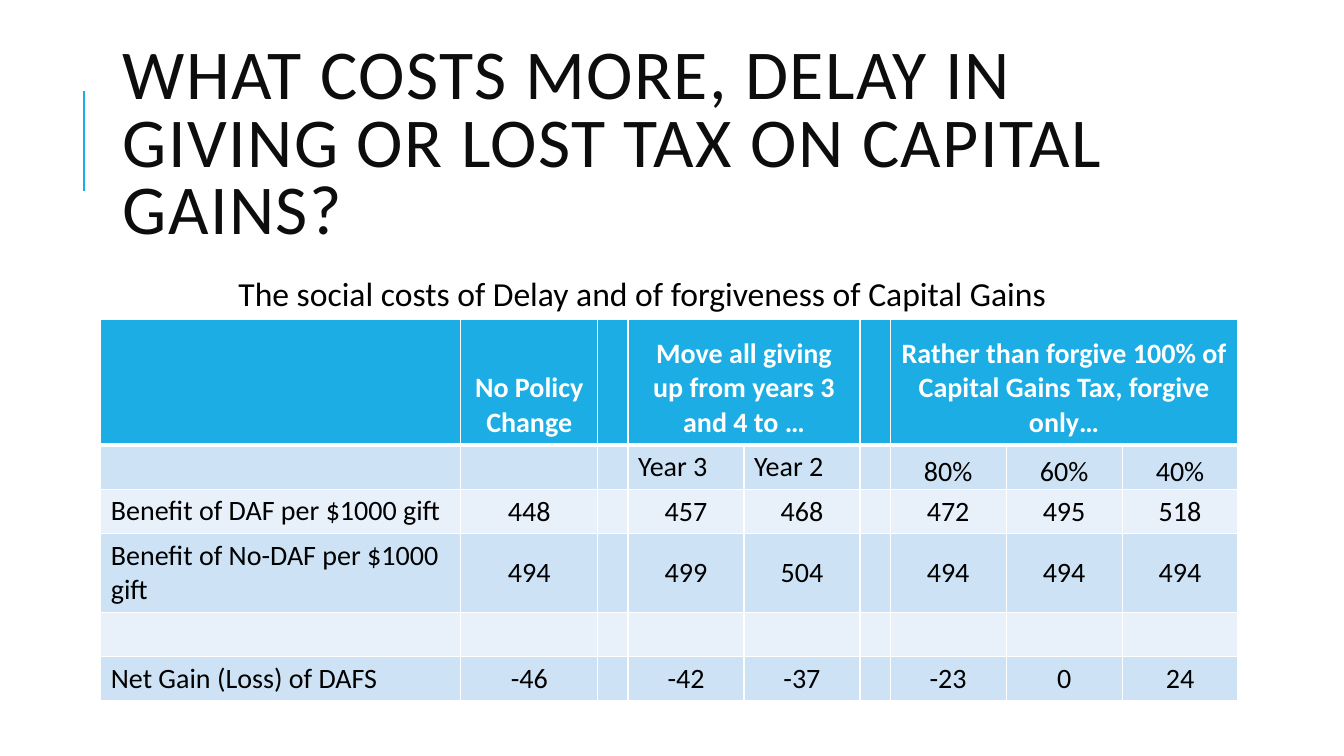
from lxml import etree
from pptx import Presentation
from pptx import util as u
from pptx.dml.color import RGBColor
from pptx.enum import shapes, text
from pptx.oxml.ns import qn

WIDTH, HEIGHT = 13.33, 7.5
FONT = "Calibri"
ACCENT, WHITE, BLACK, TITLE_INK = "1CADE4", "FFFFFF", "000000", "0D0D0D"
BANDS = ["CDE3F5", "E8F1FA"]
LEFT, CENTER = text.PP_ALIGN.LEFT, text.PP_ALIGN.CENTER
TOP, MIDDLE, BOTTOM = text.MSO_ANCHOR.TOP, text.MSO_ANCHOR.MIDDLE, text.MSO_ANCHOR.BOTTOM

COLUMNS = [3.57, 1.36, 0.3, 1.15, 1.15, 0.3, 1.15, 1.15, 1.15]
ROWS = [1.24] + [0.44] * 5
HEADERS = ["", "No Policy\vChange", "", "Move all giving up from years 3 and 4 to …", "", "",
           "Rather than forgive 100% of Capital Gains Tax, forgive only…", "", ""]
BODY = [
    ["", "", "", "Year 3", "Year 2", "", "80%", "60%", "40%"],
    ["Benefit of DAF per $1000 gift", "448", "", "457", "468", "", "472", "495", "518"],
    ["Benefit of No-DAF per $1000 gift", "494", "", "499", "504", "", "494", "494", "494"],
    [""] * 9,
    ["Net Gain (Loss) of DAFS", "-46", "", "-42", "-37", "", "-23", "0", "24"],
]
HEADER_SPANS = [(3, 4), (6, 8)]


def color(code):
    return RGBColor.from_string(code)


def write(frame, wording, size=20, ink=BLACK, bold=False, align=LEFT, anchor=TOP,
          line_spacing=None, tracking=0):
    """Fill a text frame with one formatted paragraph; tracking is in points."""
    frame.word_wrap = True
    frame.vertical_anchor = anchor
    para = frame.paragraphs[0]
    para.text = wording
    para.alignment = align
    para.line_spacing = line_spacing
    for span in para.runs:
        span.font.name = FONT
        span.font.size = u.Pt(size)
        span.font.bold = bold
        span.font.color.rgb = color(ink)
        if tracking:
            span.font._element.set("spc", str(tracking * 100))


def set_borders(cell, top, bottom):
    """Draw white cell borders; the side borders are one point wide."""
    properties = cell._tc.get_or_add_tcPr()
    for side, width in zip("LRTB", (1, 1, top, bottom)):
        line = etree.SubElement(properties, qn(f"a:ln{side}"), w=str(u.Pt(width)))
        fill = etree.SubElement(line, qn("a:solidFill"))
        etree.SubElement(fill, qn("a:srgbClr"), val=WHITE)


class Slide:
    """Places elements by shares of the slide's width and height."""

    def __init__(self, deck):
        self.deck = deck
        self.page = deck.slides.add_slide(deck.slide_layouts[5])

    def x(self, share):
        return int(self.deck.slide_width * share)

    def y(self, share):
        return int(self.deck.slide_height * share)

    def area(self, left, top, width, height):
        return self.x(left), self.y(top), self.x(width), self.y(height)

    def title(self, wording, *shares):
        box = self.page.shapes.title
        box.left, box.top, box.width, box.height = self.area(*shares)
        box.text_frame.auto_size = text.MSO_AUTO_SIZE.NONE
        write(box.text_frame, wording, size=50, ink=TITLE_INK, anchor=MIDDLE,
              line_spacing=0.8, tracking=1)

    def caption(self, wording, *shares):
        box = self.page.shapes.add_textbox(*self.area(*shares))
        write(box.text_frame, wording, size=24)

    def accent_line(self, across, start, end):
        line = self.page.shapes.add_connector(
            shapes.MSO_CONNECTOR.STRAIGHT,
            self.x(across), self.y(start), self.x(across), self.y(end))
        line.line.color.rgb = color(ACCENT)
        line.line.width = u.Pt(1.5)
        etree.SubElement(line._element.spPr, qn("a:effectLst"))

    def cost_table(self, *shares):
        table = self.page.shapes.add_table(len(ROWS), len(COLUMNS), *self.area(*shares)).table
        for column, width in zip(table.columns, COLUMNS):
            column.width = u.Inches(width)
        for row, height in zip(table.rows, ROWS):
            row.height = u.Inches(height)
        for row, wordings in enumerate([HEADERS] + BODY):
            for column, wording in enumerate(wordings):
                self.cost_cell(table.cell(row, column), wording, row, column)
        for first, last in HEADER_SPANS:
            table.cell(0, first).merge(table.cell(0, last))

    def cost_cell(self, cell, wording, row, column):
        set_borders(cell, top=3 if row == 1 else 1, bottom=1 if row else 3)
        cell.fill.solid()
        cell.fill.fore_color.rgb = color(BANDS[(row - 1) % 2] if row else ACCENT)
        is_label = column == 0 or wording.startswith("Year")
        if row and wording and not is_label:
            cell.margin_left = cell.margin_right = cell.margin_top = u.Inches(0.01)
            cell.margin_bottom = 0
        anchor = TOP if is_label else BOTTOM if row < 2 else MIDDLE
        write(cell.text_frame, wording, ink=BLACK if row else WHITE, bold=row == 0,
              align=LEFT if is_label else CENTER)
        cell.vertical_anchor = anchor


def main():
    deck = Presentation()
    deck.slide_width, deck.slide_height = u.Inches(WIDTH), u.Inches(HEIGHT)
    slide = Slide(deck)
    slide.accent_line(0.0625, 0.253, 0.12)
    slide.title("WHAT COSTS MORE, DELAY IN GIVING OR LOST TAX ON CAPITAL GAINS?",
                0.084, 0.085, 0.797, 0.219)
    slide.cost_table(0.075, 0.423, 0.845, 0.499)
    slide.caption("The social costs of Delay and of forgiveness of Capital Gains",
                  0.17, 0.355, 0.639, 0.067)
    deck.save("out.pptx")


if __name__ == "__main__":
    main()
